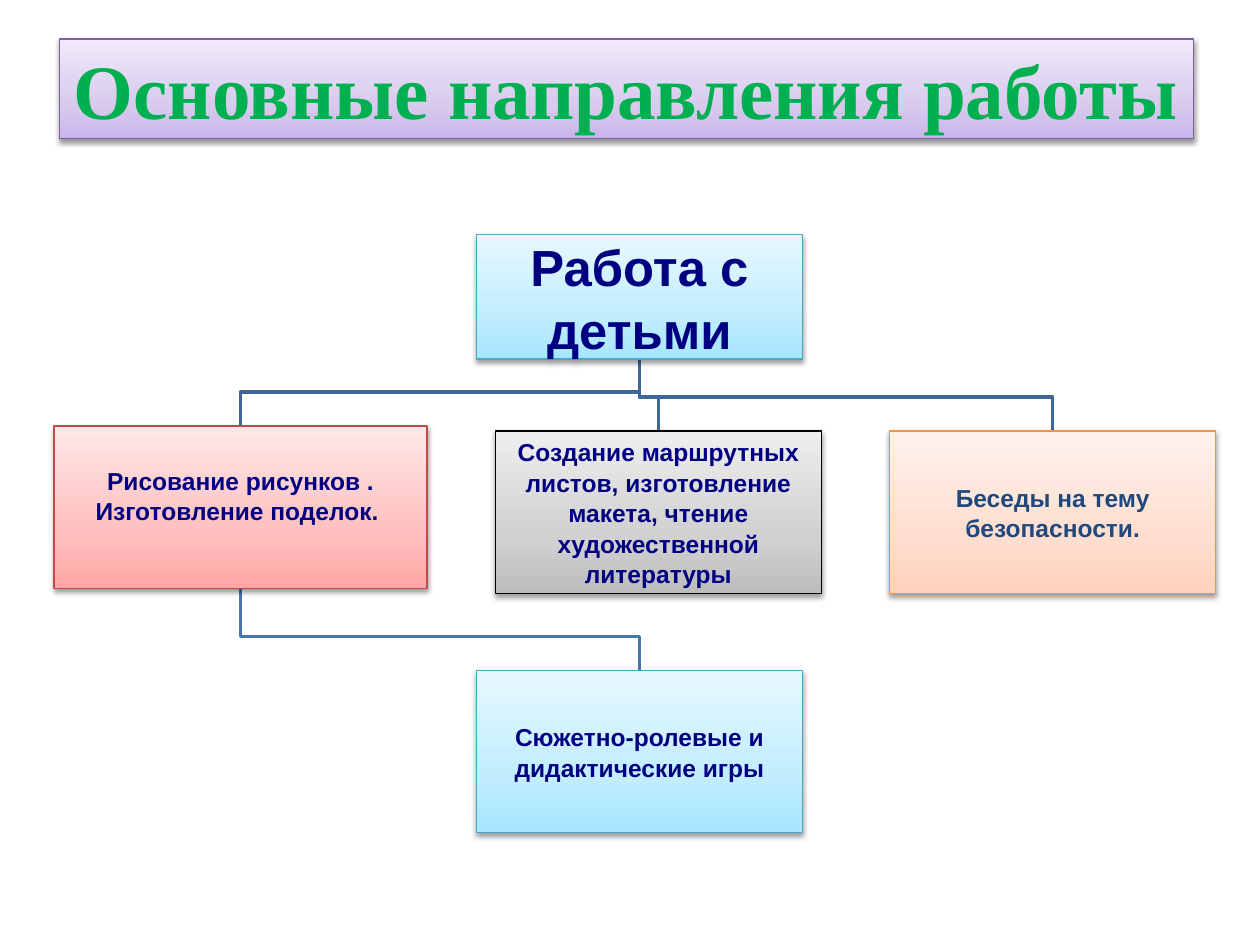
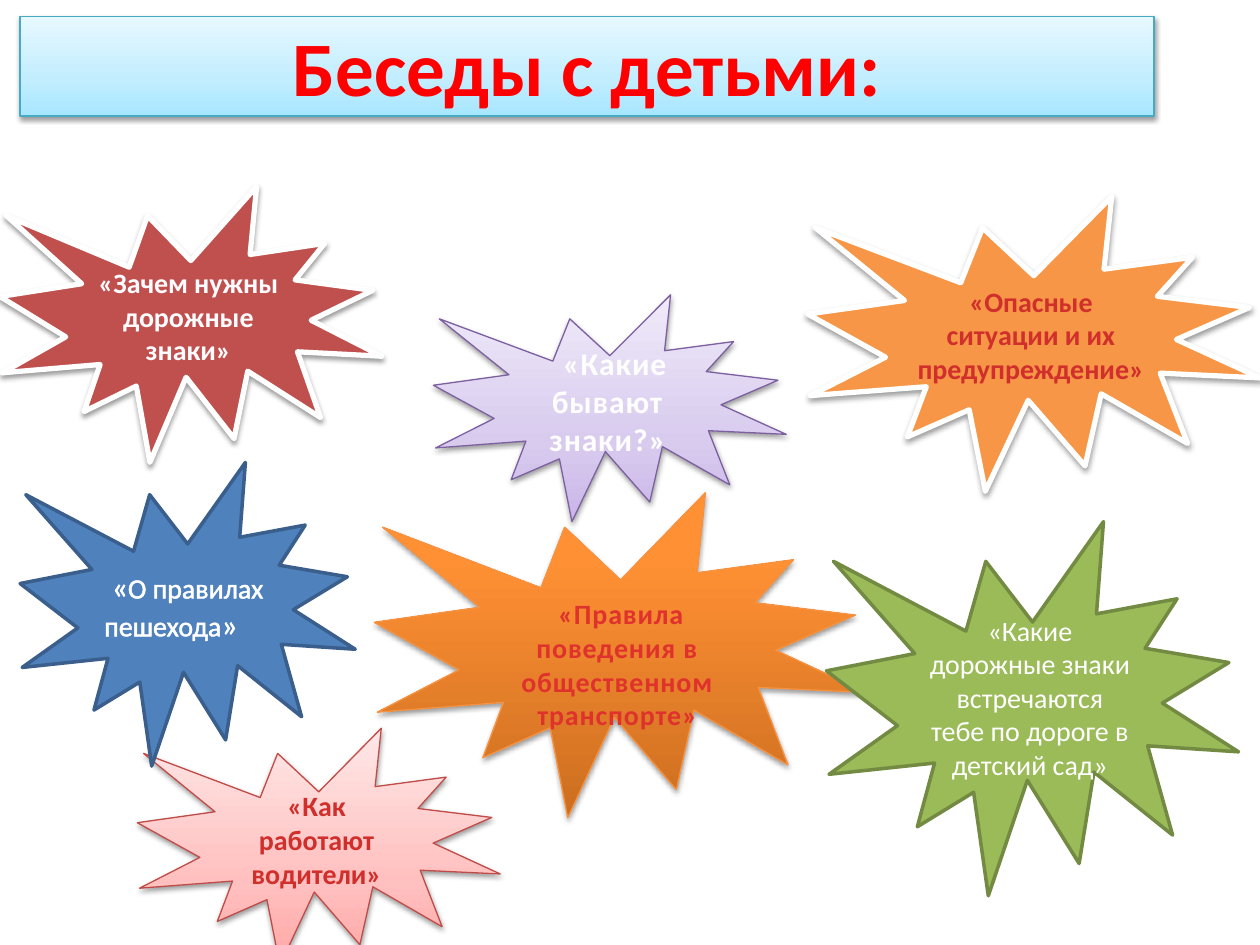
import dataclasses
import typing

import lxml.etree
import pptx
import pptx.dml.color
import pptx.enum.shapes
import pptx.enum.text
import pptx.oxml.ns
import pptx.util

Inches = pptx.util.Inches
Pt = pptx.util.Pt
qn = pptx.oxml.ns.qn
MSO_SHAPE = pptx.enum.shapes.MSO_SHAPE
PP_ALIGN = pptx.enum.text.PP_ALIGN


class Gradient(typing.NamedTuple):
    stops: tuple[tuple[int, str], ...]
    angle: int = 270


Paint = str | Gradient


def soft(dark: str, mid: str, light: str) -> Gradient:
    return Gradient(((0, dark), (35, mid), (100, light)))


@dataclasses.dataclass(frozen=True)
class Theme:
    serif: str = "Times New Roman"
    sans: str = "Calibri"
    chart_font: str = "Arial"
    title_size: int = 44
    root_size: int = 29
    branch_size: int = 14
    talk_size: int = 16
    big_talk_size: int = 18
    thin: float = 0.75
    medium: float = 2
    thick: float = 3
    green: str = "00B050"
    bright_red: str = "FF0000"
    navy: str = "000080"
    slate: str = "1F497D"
    white: str = "FFFFFF"
    black: str = "000000"
    link: str = "3F6797"
    low_link: str = "4875AC"
    blue_edge: str = "46AAC5"
    red_edge: str = "BF4C48"
    purple_edge: str = "7D60A0"
    orange_edge: str = "F69240"
    blue: Gradient = soft("A7E6FF", "C1EDFF", "E7F8FF")
    red: Gradient = soft("FFA6A5", "FFC0BF", "FFE7E7")
    grey: Gradient = soft("BDBDBD", "D1D1D1", "EEEEEE")
    peach: Gradient = soft("FFD2BD", "FFDED0", "FFF2ED")
    purple: Gradient = soft("C9B5E8", "D8CBEE", "F0EAF9")
    orange: Gradient = Gradient(((0, "CC6E20"), (80, "FF9034"), (100, "FF9136")))
    red_text: Gradient = Gradient(((0, "FC7C7A"), (75, "D02F2C"), (100, "C70500")), 90)
    deep_red_text: Gradient = Gradient(((25, "E0322D"), (100, "A2201C")), 90)


T = Theme()


class Outline(typing.NamedTuple):
    color: str
    width: float
    alpha: int = 100


@dataclasses.dataclass(frozen=True)
class Box:
    at: tuple[float, float, float, float]
    fill: Paint
    edge: str
    edge_width: float = T.thin
    shadow: bool = True

    @property
    def middle(self) -> float:
        return self.at[0] + self.at[2] / 2

    @property
    def bottom(self) -> float:
        return self.at[1] + self.at[3]


@dataclasses.dataclass(frozen=True)
class Label:
    runs: tuple[tuple[str, int], ...]
    color: Paint
    font: str = T.sans
    bold: bool = True
    align: PP_ALIGN = PP_ALIGN.CENTER
    margins: tuple[float, float, float, float] = (0.1, 0.05, 0.1, 0.05)
    line_spacing: float = 1.0
    indent: float = 0
    tracking: float = 0
    outline: Outline | None = None


class Item(typing.NamedTuple):
    box: Box
    label: Label


def apply(target: typing.Any, values: dict[str, typing.Any]) -> None:
    for name, value in values.items():
        setattr(target, name, value)


def rgb(color: str) -> pptx.dml.color.RGBColor:
    return pptx.dml.color.RGBColor.from_string(color)


def add_color(parent: typing.Any, color: str, alpha: int = 100) -> None:
    node = lxml.etree.SubElement(parent, qn("a:srgbClr"), val=color)
    if alpha < 100:
        lxml.etree.SubElement(node, qn("a:alpha"), val=str(alpha * 1000))


def paint_xml(paint: Paint, alpha: int = 100) -> typing.Any:
    if isinstance(paint, str):
        node = lxml.etree.Element(qn("a:solidFill"))
        add_color(node, paint, alpha)
        return node
    node = lxml.etree.Element(qn("a:gradFill"), rotWithShape="1")
    stops = lxml.etree.SubElement(node, qn("a:gsLst"))
    for pos, color in paint.stops:
        add_color(lxml.etree.SubElement(stops, qn("a:gs"), pos=str(pos * 1000)), color)
    lxml.etree.SubElement(node, qn("a:lin"), ang=str(paint.angle * 60000), scaled="0")
    return node


def style_box(sp: typing.Any, box: Box) -> None:
    places = map(Inches, box.at)
    apply(sp, dict(zip(("left", "top", "width", "height"), places)))
    sp.fill.background()
    props = sp._element.spPr
    props.replace(props.find(qn("a:noFill")), paint_xml(box.fill))
    sp.line.color.rgb = rgb(box.edge)
    sp.line.width = Pt(box.edge_width)
    sp.shadow.inherit = False
    if box.shadow:
        shadow = lxml.etree.SubElement(
            props.find(qn("a:effectLst")), qn("a:outerShdw"),
            blurRad=str(Pt(3.1)), dist=str(Pt(1.6)), dir="5400000", rotWithShape="0",
        )
        add_color(shadow, T.black, 38)


def write_label(sp: typing.Any, label: Label) -> None:
    tf = sp.text_frame
    sides = ("margin_left", "margin_top", "margin_right", "margin_bottom")
    apply(tf, dict(zip(sides, map(Inches, label.margins))))
    apply(tf, {
        "word_wrap": True,
        "auto_size": pptx.enum.text.MSO_AUTO_SIZE.NONE,
        "vertical_anchor": pptx.enum.text.MSO_ANCHOR.MIDDLE,
    })
    p = tf.paragraphs[0]
    apply(p, {"alignment": label.align, "line_spacing": label.line_spacing})
    if label.indent:
        p._p.get_or_add_pPr().set("indent", str(Inches(label.indent)))
    for text, size in label.runs:
        r = p.add_run()
        r.text = text
        apply(r.font, {"name": label.font, "size": Pt(size), "bold": label.bold})
        props = r._r.get_or_add_rPr()
        props.insert(0, paint_xml(label.color))
        if label.outline:
            line = lxml.etree.Element(qn("a:ln"), w=str(Pt(label.outline.width)))
            line.append(paint_xml(label.outline.color, label.outline.alpha))
            props.insert(0, line)
        if label.tracking:
            props.set("spc", str(int(label.tracking * 100)))


def add_title(s: typing.Any, item: Item) -> None:
    style_box(s.shapes.title, item.box)
    write_label(s.shapes.title, item.label)


def add_item(s: typing.Any, shape: MSO_SHAPE, item: Item) -> None:
    sp = s.shapes.add_shape(shape, *map(Inches, item.box.at))
    style_box(sp, item.box)
    write_label(sp, item.label)


def add_elbow(s: typing.Any, parent: Box, child: Box, color: str) -> None:
    bend = child.at[1] - 0.27
    points = [(parent.middle, bend), (child.middle, bend), (child.middle, child.at[1])]
    start = Inches(parent.middle), Inches(parent.bottom)
    builder = s.shapes.build_freeform(*start)
    builder.add_line_segments([(Inches(x), Inches(y)) for x, y in points], close=False)
    sp = builder.convert_to_shape()
    sp.fill.background()
    sp.line.color.rgb = rgb(color)
    sp.line.width = Pt(T.medium)
    sp.shadow.inherit = False


def chart_label(text: str, size: int = T.branch_size, color: str = T.navy,
                bottom: float = 0.01) -> Label:
    return Label(((text, size),), color, T.chart_font,
                 margins=(0.01, 0.01, 0.01, bottom), line_spacing=1.04)


def talk(text: str, color: Paint, size: int = T.talk_size, **extra: typing.Any) -> Label:
    return Label(((text, size),), color, **extra)


WORK_TITLE = Item(
    Box((0.47, 0.31, 9, 0.79), T.purple, T.purple_edge),
    Label((("Основные направления работы", T.title_size),), T.green, T.serif),
)
TALKS_TITLE = Item(
    Box((0.16, 0.13, 9, 0.79), T.blue, T.blue_edge),
    Label((("Беседы с детьми:", T.title_size),), T.bright_red),
)

ROOT = Item(Box((3.78, 1.86, 2.59, 0.99), T.blue, T.blue_edge),
            chart_label("Работа с детьми", T.root_size))
DRAWING = Item(Box((0.43, 3.38, 2.96, 1.29), T.red, T.red_edge),
               chart_label("Рисование рисунков . Изготовление поделок. ", bottom=0.2))
GAMES = Item(Box((3.78, 5.32, 2.59, 1.29), T.blue, T.blue_edge),
             chart_label("Сюжетно-ролевые и дидактические игры"))
ROUTES = Item(Box((3.93, 3.42, 2.59, 1.29), T.grey, T.black),
              chart_label("Создание маршрутных листов, изготовление макета, "
                          "чтение художественной литературы"))
SAFETY = Item(Box((7.06, 3.42, 2.59, 1.29), T.peach, T.orange_edge),
              chart_label("Беседы на тему безопасности.", color=T.slate))

LINKS = (
    (ROOT, SAFETY, T.link),
    (ROOT, ROUTES, T.link),
    (DRAWING, GAMES, T.low_link),
    (ROOT, DRAWING, T.link),
)

TALKS = (
    Item(Box((0, 1.48, 3.03, 2.19), "C0504D", T.white, T.thick),
         talk("«Зачем нужны дорожные знаки»", "FCFCFF",
              outline=Outline("1E7CEE", 0.07, 55))),
    Item(Box((1.09, 5.78, 2.88, 1.88), T.red, T.red_edge),
         talk("«Как работают водители»", T.red_text)),
    Item(Box((3.44, 2.34, 2.8, 1.8), T.purple, T.purple_edge),
         talk("«Какие бывают знаки?»", "FFFEFE", T.big_talk_size, indent=0.12,
              tracking=0.5, outline=Outline("E78738", 1))),
    Item(Box((0.16, 3.67, 2.66, 2.41), "4F81BD", "3A5F8C", T.medium, False),
         Label((("«", T.big_talk_size), ("О правилах пешехода", T.talk_size),
                ("»", T.big_talk_size)), T.white, bold=False, align=PP_ALIGN.LEFT,
               indent=0.06, outline=Outline(T.white, 1.45))),
    Item(Box((6.41, 1.56, 3.59, 2.34), "F79646", T.white, T.thick),
         talk("«Опасные ситуации и их предупреждение»", T.red_text)),
    Item(Box((2.97, 3.91, 3.91, 2.58), T.orange, T.orange_edge),
         talk("«Правила поведения в общественном транспорте»", T.deep_red_text,
              indent=0.06, tracking=0.5, margins=(0.1, 0.35, 0.1, 0.05))),
    Item(Box((6.56, 4.14, 3.27, 2.97), "9BBB59", "738A42", T.medium, False),
         talk("«Какие дорожные знаки встречаются тебе по дороге в детский сад»",
              T.white, bold=False)),
)


def main() -> None:
    prs = pptx.Presentation()
    apply(prs, {"slide_width": Inches(10), "slide_height": Inches(7.5)})
    title_only = prs.slide_layouts[5]

    s = prs.slides.add_slide(title_only)
    add_title(s, WORK_TITLE)
    for parent, child, color in LINKS:
        add_elbow(s, parent.box, child.box, color)
    for item in (ROOT, DRAWING, GAMES, ROUTES, SAFETY):
        add_item(s, MSO_SHAPE.RECTANGLE, item)

    s = prs.slides.add_slide(title_only)
    add_title(s, TALKS_TITLE)
    for item in TALKS:
        add_item(s, MSO_SHAPE.EXPLOSION1, item)

    prs.save("out.pptx")


if __name__ == "__main__":
    main()
